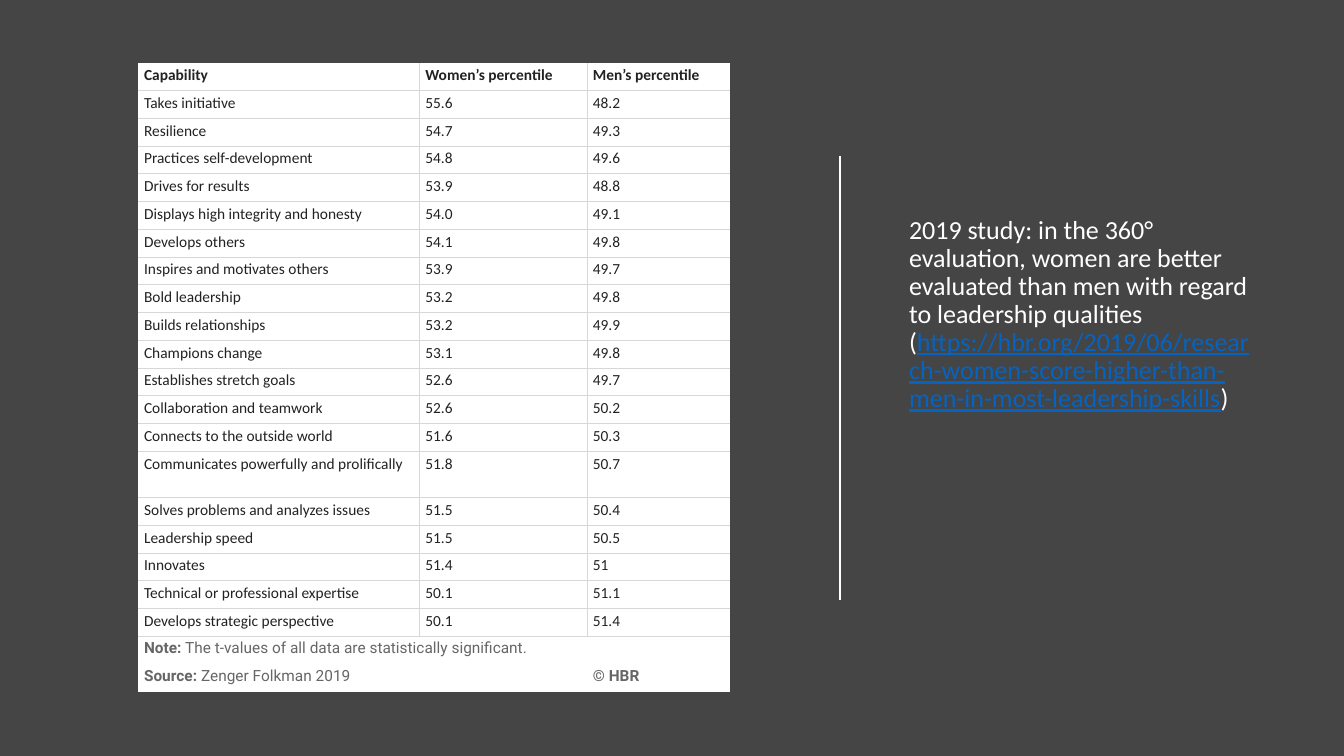
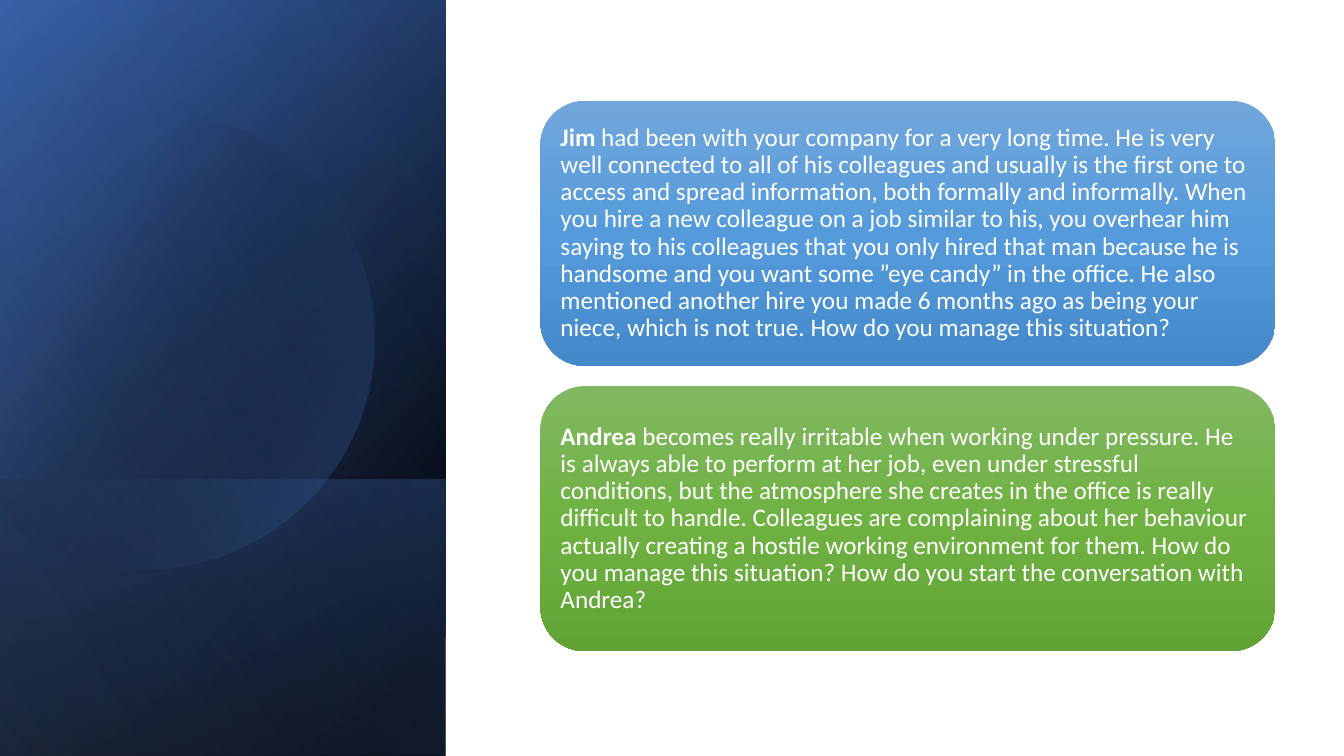
from math import acos, cos, sin

from lxml.etree import SubElement
from pptx import Presentation
from pptx.dml.color import RGBColor
from pptx.enum.shapes import MSO_CONNECTOR as Connector, MSO_SHAPE as Shape
from pptx.enum.text import MSO_ANCHOR as Anchor, PP_ALIGN as Align
from pptx.oxml import parse_xml
from pptx.oxml.ns import nsdecls, qn
from pptx.util import Cm, Pt

COLOURS = {
    "white": "FFFFFF", "black": "000000", "charcoal": "454545",
    "ink": "222222", "note": "666666", "grid": "D5D7D8", "link": "0563C1",
    "navy": "2F5597", "blue": "4472C4", "pale": "8FAADC",
    "sky light": "71A6DB", "sky": "559BDB", "sky dark": "448ACA",
    "green light": "81B861", "green": "6FB242", "green dark": "62A336",
}
BODY_FONT, NOTE_FONT = "Calibri", "Roboto"
SLIDE_W, SLIDE_H = 33.87, 19.05

HEADER = ("Capability", "Women’s percentile", "Men’s percentile")
SCORES = [
    ("Takes initiative", "55.6", "48.2"),
    ("Resilience", "54.7", "49.3"),
    ("Practices self-development", "54.8", "49.6"),
    ("Drives for results", "53.9", "48.8"),
    ("Displays high integrity and honesty", "54.0", "49.1"),
    ("Develops others", "54.1", "49.8"),
    ("Inspires and motivates others", "53.9", "49.7"),
    ("Bold leadership", "53.2", "49.8"),
    ("Builds relationships", "53.2", "49.9"),
    ("Champions change", "53.1", "49.8"),
    ("Establishes stretch goals", "52.6", "49.7"),
    ("Collaboration and teamwork", "52.6", "50.2"),
    ("Connects to the outside world", "51.6", "50.3"),
    ("Communicates powerfully and prolifically", "51.8", "50.7"),
    ("Solves problems and analyzes issues", "51.5", "50.4"),
    ("Leadership speed", "51.5", "50.5"),
    ("Innovates", "51.4", "51"),
    ("Technical or professional expertise", "50.1", "51.1"),
    ("Develops strategic perspective", "50.1", "51.4"),
]
NOTE = [("Note:", {"bold": True}),
        (" The t-values of all data are statistically significant.", {})]
SOURCE = [("Source:", {"bold": True}), (" Zenger Folkman 2019", {})]
COPYRIGHT = [("© HBR", {"bold": True})]
COLUMN_WIDTHS = (7.09, 4.22, 3.6)
ROW_H, TALL_ROW_H, TALL_ROW = 0.7, 1.17, 14

STUDY = [
    ("2019 study: in the 360° evaluation, women are better evaluated than men "
     "with regard to leadership qualities (", {}),
    ("https://hbr.org/2019/06/research-women-score-higher-than-men-in-most-leadership-skills",
     {"colour": "link", "underline": True}),
    (")", {}),
]

CASES = [
    ("Jim ",
     "had been with your company for a very long time. He is very well connected "
     "to all of his colleagues and usually is the first one to access and spread "
     "information, both formally and informally. When you hire a new colleague on "
     "a job similar to his, you overhear him saying to his colleagues that you only "
     "hired that man because he is handsome and you want some ”eye candy” in the "
     "office. He also mentioned another hire you made 6 months ago as being your "
     "niece, which is not true. How do you manage this situation?",
     "sky"),
    ("Andrea ",
     "becomes really irritable when working under pressure. He is always able to "
     "perform at her job, even under stressful conditions, but the atmosphere she "
     "creates in the office is really difficult to handle. Colleagues are "
     "complaining about her behaviour actually creating a hostile working "
     "environment for them. How do you manage this situation? How do you start the "
     "conversation with Andrea?",
     "green"),
]
CARD_LEFT, CARD_TOP, CARD_W, CARD_H, CARD_GAP = 13.62, 2.54, 18.52, 6.68, 0.51

PANEL_W, BAND_TOP = 11.23, 12.09
BACK_LAYERS = [
    (0, [(8, "black", 100), (100, "navy", 100)], 50),
    (0, [(0, "black", 0), (99, "blue", 46)], 30),
    (BAND_TOP, [(2, "blue", 29), (100, "black", 30)], 130),
]
DISC_GLOW = [(29, "black", 0), (100, "blue", 43)], 30
FRONT_LAYER = (0, [(0, "black", 0), (99, "pale", 11)], 120)
DISC_X, DISC_Y, DISC_R, DISC_STEPS = 3.63, 8.53, 5.82, 120


def rgb(name):
    return RGBColor.from_string(COLOURS[name])


def write_text(frame, runs, size=11, font=BODY_FONT, colour="white",
               bold=False, spacing=None, anchor=Anchor.TOP, inset=None):
    frame.word_wrap = True
    frame.vertical_anchor = anchor
    if inset is not None:
        frame.margin_left = frame.margin_right = Cm(inset)
        frame.margin_top = frame.margin_bottom = Cm(inset)
    paragraph = frame.paragraphs[0]
    paragraph.alignment = Align.LEFT
    if spacing:
        paragraph.line_spacing = spacing
    for words, style in runs:
        run = paragraph.add_run()
        run.text = words
        run.font.name = font
        run.font.size = Pt(size)
        run.font.bold = style.get("bold", bold)
        run.font.underline = style.get("underline", False)
        run.font.color.rgb = rgb(style.get("colour", colour))


def fill_gradient(shape, stops, angle):
    shape.shadow.inherit = False
    shape.line.fill.background()
    shape.fill.background()
    gradient = parse_xml(f'<a:gradFill {nsdecls("a")} rotWithShape="1"><a:gsLst/>'
                         f'<a:lin ang="{angle * 60000}" scaled="0"/></a:gradFill>')
    for position, name, opacity in stops:
        stop = SubElement(gradient[0], qn("a:gs"), pos=str(position * 1000))
        tint = SubElement(stop, qn("a:srgbClr"), val=COLOURS[name])
        if opacity < 100:
            SubElement(tint, qn("a:alpha"), val=str(opacity * 1000))
    properties = shape._element.spPr
    properties.replace(properties.find(qn("a:noFill")), gradient)


def add_panel_layer(slide, top, stops, angle):
    height = SLIDE_H - top
    left = (PANEL_W - height) / 2
    layer = slide.shapes.add_shape(
        Shape.RECTANGLE, Cm(left), Cm(top - left), Cm(height), Cm(PANEL_W))
    layer.rotation = 90
    layer._element.spPr.xfrm.set("flipH", "1")
    fill_gradient(layer, stops, angle)


def add_disc(slide):
    reach = acos(-DISC_X / DISC_R)
    angles = [reach * (2 * i / DISC_STEPS - 1) for i in range(DISC_STEPS + 1)]
    points = [(Cm(DISC_X + DISC_R * cos(a)), Cm(DISC_Y + DISC_R * sin(a)))
              for a in angles]
    outline = slide.shapes.build_freeform(*points[0])
    outline.add_line_segments(points[1:], close=True)
    fill_gradient(outline.convert_to_shape(), *DISC_GLOW)


def style_cell(cell, sides):
    cell.fill.solid()
    cell.fill.fore_color.rgb = rgb("white")
    cell.margin_left = cell.margin_right = Cm(0.15)
    cell.margin_top = cell.margin_bottom = Cm(0.08)
    properties = cell._tc.get_or_add_tcPr()
    for place, side in enumerate("LRTB"):
        paint = (f'<a:solidFill><a:srgbClr val="{COLOURS["grid"]}"/></a:solidFill>'
                 if side in sides else "<a:noFill/>")
        properties.insert(place, parse_xml(
            f'<a:ln{side} {nsdecls("a")} w="{Pt(0.5)}">{paint}</a:ln{side}>'))


def add_score_table(slide):
    graded = [HEADER] + SCORES
    note_row, source_row = len(graded), len(graded) + 1
    heights = [TALL_ROW_H if row == TALL_ROW else ROW_H
               for row in range(source_row + 1)]
    table = slide.shapes.add_table(
        len(heights), len(COLUMN_WIDTHS), Cm(3.48), Cm(1.58),
        Cm(sum(COLUMN_WIDTHS)), Cm(sum(heights))).table
    table.first_row = table.horz_banding = False
    for column, width in zip(table.columns, COLUMN_WIDTHS):
        column.width = Cm(width)
    last = len(COLUMN_WIDTHS) - 1
    for r, height in enumerate(heights):
        table.rows[r].height = Cm(height)
        for c in range(last + 1):
            sides = "T" if r == note_row else ""
            if r < note_row:
                sides = ("L" * (c > 0) + "R" * (c < last) + "T" * (r > 0) + "B")
            style_cell(table.cell(r, c), sides)
    for r, row in enumerate(graded):
        for c, words in enumerate(row):
            write_text(table.cell(r, c).text_frame, [(words, {})],
                       colour="ink", bold=r == 0)
    table.cell(note_row, 0).merge(table.cell(note_row, last))
    table.cell(source_row, 0).merge(table.cell(source_row, 1))
    for r, c, runs in ((note_row, 0, NOTE), (source_row, 0, SOURCE),
                       (source_row, last, COPYRIGHT)):
        write_text(table.cell(r, c).text_frame, runs, font=NOTE_FONT, colour="note")


def add_slide(deck, background):
    slide = deck.slides.add_slide(deck.slide_layouts[6])
    slide.background.fill.solid()
    slide.background.fill.fore_color.rgb = rgb(background)
    return slide


def build_study(deck):
    slide = add_slide(deck, "charcoal")
    study = slide.shapes.add_textbox(Cm(22.66), Cm(2.29), Cm(9.22), Cm(8.25))
    write_text(study.text_frame, STUDY, size=18.6, spacing=0.9, anchor=Anchor.BOTTOM)
    divider = slide.shapes.add_connector(
        Connector.STRAIGHT, Cm(21.16), Cm(3.94), Cm(21.16), Cm(15.11))
    divider.line.color.rgb = rgb("white")
    divider.line.width = Pt(1.25)
    SubElement(divider._element.spPr, qn("a:effectLst"))
    add_score_table(slide)


def build_cases(deck):
    slide = add_slide(deck, "white")
    for layer in BACK_LAYERS:
        add_panel_layer(slide, *layer)
    add_disc(slide)
    add_panel_layer(slide, *FRONT_LAYER)
    for i, (person, story, hue) in enumerate(CASES):
        card = slide.shapes.add_shape(
            Shape.ROUNDED_RECTANGLE, Cm(CARD_LEFT),
            Cm(CARD_TOP + i * (CARD_H + CARD_GAP)), Cm(CARD_W), Cm(CARD_H))
        fill_gradient(card, [(0, f"{hue} light", 100), (50, hue, 100),
                             (100, f"{hue} dark", 100)], 90)
        write_text(card.text_frame, [(person, {"bold": True}), (story, {})],
                   size=18, spacing=0.9, anchor=Anchor.MIDDLE, inset=0.18)


def main():
    deck = Presentation()
    deck.slide_width, deck.slide_height = Cm(SLIDE_W), Cm(SLIDE_H)
    build_study(deck)
    build_cases(deck)
    deck.save("out.pptx")


if __name__ == "__main__":
    main()
